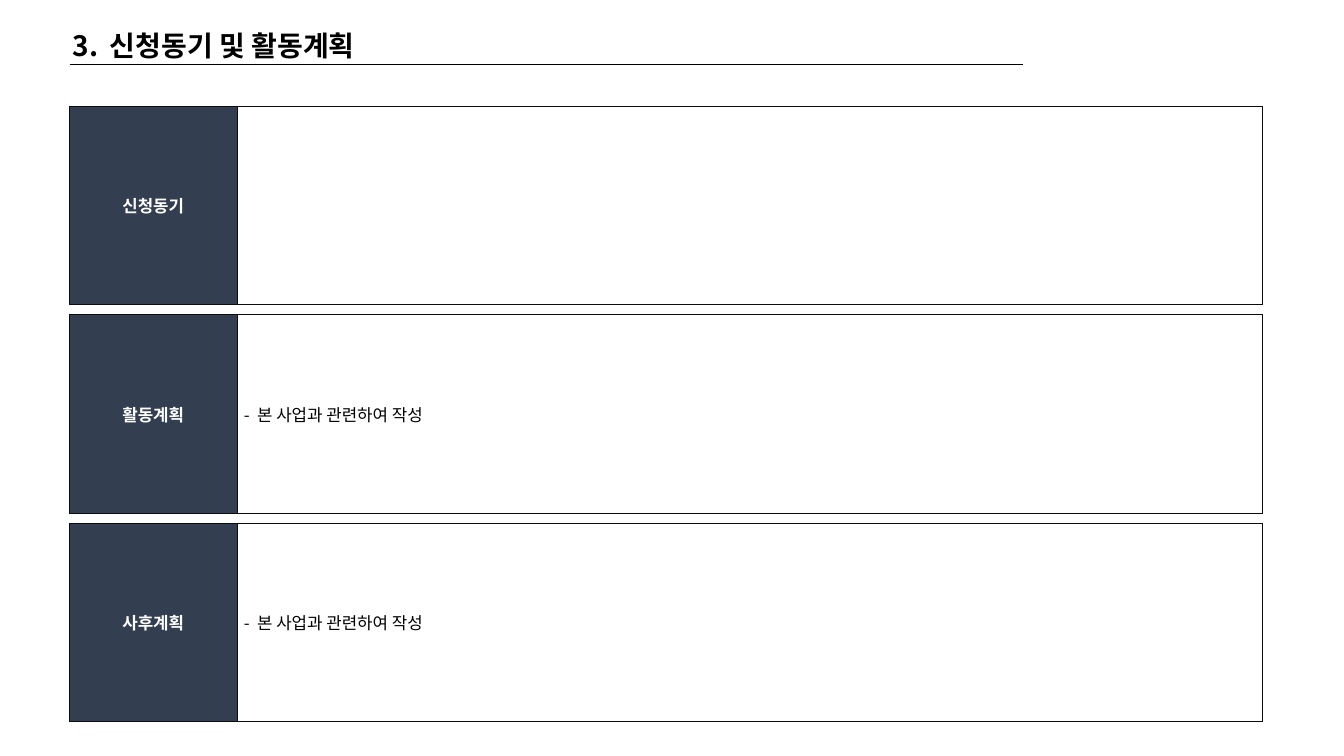
from dataclasses import dataclass

from lxml import etree
from pptx import Presentation
from pptx import util as u
from pptx.dml.color import RGBColor
from pptx.enum import shapes, text
from pptx.oxml.ns import qn


@dataclass(frozen=True)
class Theme:
    font: str = "Noto Sans CJK KR"
    ink: str = "000000"
    paper: str = "FFFFFF"
    label: str = "333F50"
    border: str = "0D0D0D"
    title_size: int = 20
    body_size: int = 12
    border_width: float = 0.5
    rule_width: float = 0.75


def write(frame, content, *, theme, size, color, bold=False, align=text.PP_ALIGN.LEFT, hang=0):
    """Write one paragraph; hang is the width kept for a leading marker."""
    para = frame.paragraphs[0]
    para.alignment = align
    if hang:
        properties = para._p.get_or_add_pPr()
        properties.set("marL", str(u.Inches(hang)))
        properties.set("indent", str(-u.Inches(hang)))
    span = para.add_run()
    span.text = content
    span.font.name = theme.font
    span.font.size = u.Pt(size)
    span.font.bold = bold
    span.font.color.rgb = RGBColor.from_string(color)
    east_asian = etree.SubElement(span._r.get_or_add_rPr(), qn("a:ea"))
    east_asian.set("typeface", theme.font)


class SlideBuilder:
    def __init__(self, slide, theme):
        self.slide = slide
        self.theme = theme

    def title(self, content, left, top, width, height, hang):
        box = self.slide.shapes.add_textbox(*map(u.Inches, (left, top, width, height)))
        frame = box.text_frame
        frame.word_wrap = True
        frame.auto_size = text.MSO_AUTO_SIZE.SHAPE_TO_FIT_TEXT
        frame.margin_left = frame.margin_right = frame.margin_top = frame.margin_bottom = 0
        write(frame, content, theme=self.theme, size=self.theme.title_size,
              color=self.theme.ink, bold=True, hang=hang)

    def rule(self, left, right, top):
        line = self.slide.shapes.add_connector(
            shapes.MSO_CONNECTOR.STRAIGHT, *map(u.Inches, (left, top, right, top)))
        line.line.color.rgb = RGBColor.from_string(self.theme.ink)
        line.line.width = u.Pt(self.theme.rule_width)
        etree.SubElement(line._element.spPr, qn("a:effectLst"))

    def cell(self, cell, fill):
        cell.fill.solid()
        cell.fill.fore_color.rgb = RGBColor.from_string(fill)
        cell.vertical_anchor = text.MSO_ANCHOR.MIDDLE
        cell.margin_left = cell.margin_right = u.Inches(0.07)
        cell.margin_top = cell.margin_bottom = 0
        # Borders come before the fill in the cell properties
        properties = cell._tc.get_or_add_tcPr()
        for index, side in enumerate(("lnL", "lnR", "lnT", "lnB")):
            border = etree.Element(qn(f"a:{side}"), w=str(u.Pt(self.theme.border_width)))
            solid = etree.SubElement(border, qn("a:solidFill"))
            etree.SubElement(solid, qn("a:srgbClr"), val=self.theme.border)
            properties.insert(index, border)

    def section(self, label, body, left, top, widths, height):
        theme = self.theme
        table = self.slide.shapes.add_table(
            1, 2, *map(u.Inches, (left, top, sum(widths), height))).table
        table.first_row = table.horz_banding = False
        for column, width in zip(table.columns, widths):
            column.width = u.Inches(width)
        label_cell, body_cell = table.cell(0, 0), table.cell(0, 1)
        self.cell(label_cell, theme.label)
        self.cell(body_cell, theme.paper)
        write(label_cell.text_frame, label, theme=theme, size=theme.body_size,
              color=theme.paper, bold=True, align=text.PP_ALIGN.CENTER)
        if body:
            write(body_cell.text_frame, body, theme=theme, size=theme.body_size,
                  color=theme.ink, hang=0.13)


def main():
    deck = Presentation()
    deck.slide_width, deck.slide_height = u.Inches(13.33), u.Inches(7.5)
    page = SlideBuilder(deck.slides.add_slide(deck.slide_layouts[6]), Theme())

    # Heading
    left = 0.69
    page.title("3.\t신청동기 및 활동계획", 0.72, 0.28, 4.83, 0.34, hang=0.37)
    page.rule(left, 10.15, 0.64)

    # Sections, evenly stacked
    guidance = "-\t본 사업과 관련하여 작성"
    sections = (("신청동기", ""), ("활동계획", guidance), ("사후계획", guidance))
    first_top, height, gap = 1.05, 1.97, 0.1
    for index, (label, body) in enumerate(sections):
        page.section(label, body, left, first_top + index * (height + gap), (1.66, 10.17), height)

    deck.save("out.pptx")


if __name__ == "__main__":
    main()
